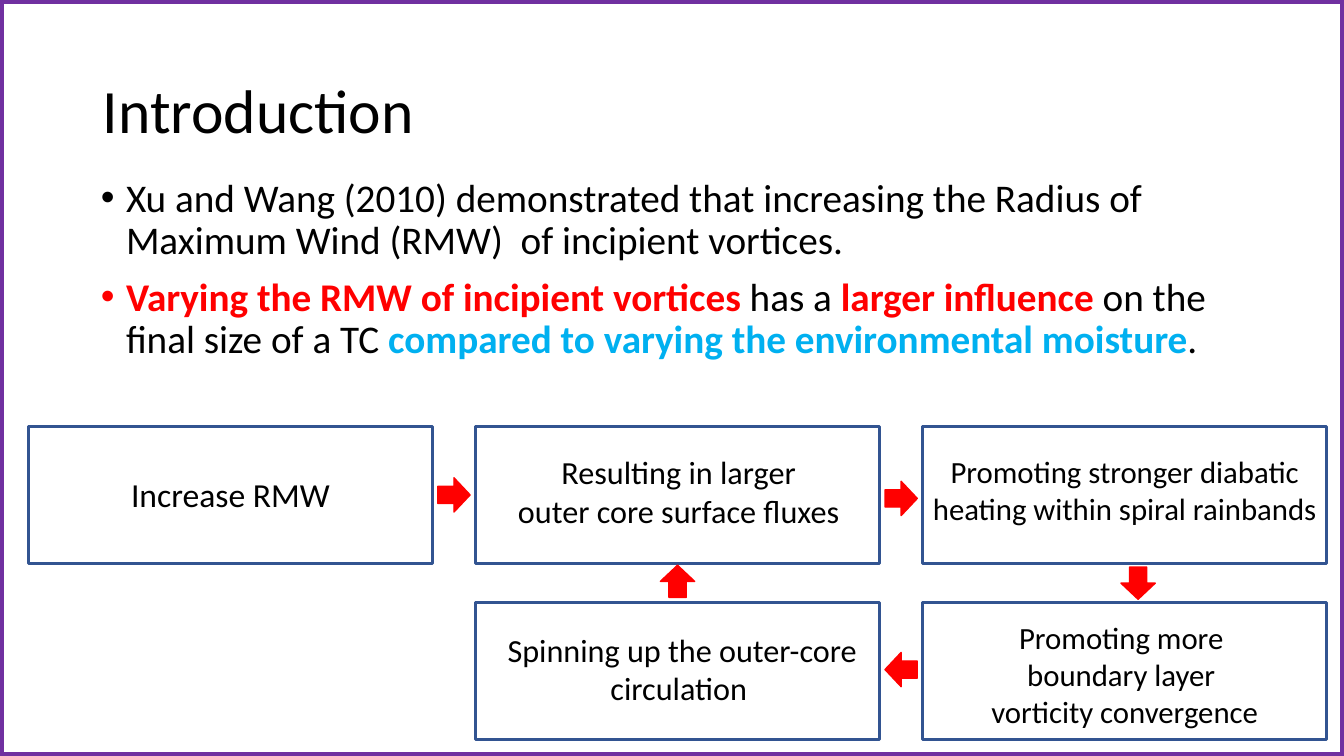
from pptx import Presentation
from pptx.dml.color import RGBColor
from pptx.enum.shapes import MSO_SHAPE
from pptx.enum.text import MSO_ANCHOR, MSO_AUTO_SIZE, PP_ALIGN
from pptx.util import Inches, Pt

RECT, ARROW = MSO_SHAPE.RECTANGLE, MSO_SHAPE.RIGHT_ARROW
LEFT, CENTER = PP_ALIGN.LEFT, PP_ALIGN.CENTER
TOP, MIDDLE = MSO_ANCHOR.TOP, MSO_ANCHOR.MIDDLE
FIXED, GROW = MSO_AUTO_SIZE.NONE, MSO_AUTO_SIZE.SHAPE_TO_FIT_TEXT

WIDE, HIGH = 13.33, 7.5
COLORS = {"ink": "000000", "frame": "7030A0", "box": "325491",
          "red": "FF0000", "sky": "00B0F0"}

# Flow grid: centre of the first box, steps between centres, box size
ORIGIN = (2.285, 4.91)
STEP = (4.435, 1.75)
BOX = (4.01, 1.36)
HEAD = (0.32, 0.34)

# column, row, text size, label width and height, nudge of the label, lines
STEPS = [
    (0, 0, 24, (2.19, 0.5), (0, -0.01), ["Increase RMW"]),
    (1, 0, 23, (3.5, 0.88), (0.05, -0.03),
     ["Resulting in larger ", "outer core surface fluxes "]),
    (2, 0, 22, (4.04, 0.84), (0, -0.05),
     ["Promoting stronger diabatic", "heating within spiral rainbands"]),
    (2, 1, 22, (2.88, 1.21), (0, 0.03),
     ["Promoting more ", "boundary layer ", "vorticity convergence"]),
    (1, 1, 23, (3.72, 0.88), (0.05, -0.02),
     ["Spinning up the outer-core", "circulation "]),
]

# column, row, turn in degrees
ARROWS = [(0.5, 0, 0), (1.5, 0.02, 0), (2.03, 0.5, 90),
          (1.5, 0.99, 180), (1, 0.49, 270)]

POINTS = [
    [("Xu and Wang (2010) demonstrated that increasing the Radius of "
      "Maximum Wind (RMW)  of incipient vortices.", "ink", False)],
    [("Varying the RMW of incipient vortices ", "red", True),
     ("has a ", "ink", False),
     ("larger influence ", "red", True),
     ("on the final size of a TC ", "ink", False),
     ("compared to varying the environmental moisture", "sky", True),
     (".", "ink", False)],
]


def paint(name):
    return RGBColor.from_string(COLORS[name])


def write(frame, lines, size, align=LEFT, anchor=TOP, wrap=True, fit=FIXED,
          space=None, before=None):
    """Fill a text frame; each line is a list of (text, colour, bold)."""
    frame.word_wrap, frame.auto_size = wrap, fit
    frame.vertical_anchor = anchor
    for i, line in enumerate(lines):
        para = frame.paragraphs[0] if i == 0 else frame.add_paragraph()
        para.alignment = align
        para.line_spacing = space
        para.space_before = before
        for text, color, bold in line:
            run = para.add_run()
            run.text = text
            font = run.font
            font.name, font.size, font.bold = "Calibri", Pt(size), bold
            font.color.rgb = paint(color)
    return frame


class Page:
    """A slide with its flow grid and its style."""

    def __init__(self, deck):
        self.slide = deck.slides.add_slide(deck.slide_layouts[1])
        self.shapes = self.slide.shapes

    def place(self, col, row, size, nudge=(0, 0)):
        """Left, top, width and height of an item centred on the grid."""
        mid = [o + n * s + d for o, n, s, d
               in zip(ORIGIN, (col, row), STEP, nudge)]
        return [Inches(m - s / 2) for m, s in zip(mid, size)] + [
            Inches(s) for s in size]

    def shape(self, kind, spot, line, width, fill=None):
        item = self.shapes.add_shape(kind, *spot)
        item.shadow.inherit = False
        item.line.color.rgb = paint(line)
        item.line.width = Pt(width)
        if fill:
            item.fill.solid()
            item.fill.fore_color.rgb = paint(fill)
        else:
            item.fill.background()
        return item

    def holder(self, index, spot, lines, size, **style):
        """Move and fill a placeholder; spot is in inches."""
        item = self.slide.placeholders[index]
        item.left, item.top, item.width, item.height = map(Inches, spot)
        write(item.text_frame, lines, size, space=0.9, **style)
        return item

    def bullets(self, spot, lines, size):
        item = self.holder(1, spot, lines, size, before=Pt(10))
        for para in item.text_frame.paragraphs:
            props = para._p.get_or_add_pPr()
            props.set("marL", str(Inches(0.25)))
            props.set("indent", str(-Inches(0.25)))

    def step(self, col, row, size, area, nudge, lines):
        self.shape(RECT, self.place(col, row, BOX), "box", 2.25)
        label = self.shapes.add_textbox(*self.place(col, row, area, nudge))
        write(label.text_frame, [[(t, "ink", False)] for t in lines], size,
              align=CENTER, wrap=False, fit=GROW)

    def arrow(self, col, row, turn):
        item = self.shape(ARROW, self.place(col, row, HEAD), "red", 1, "red")
        item.rotation = turn


def main():
    deck = Presentation()
    deck.slide_width, deck.slide_height = Inches(WIDE), Inches(HIGH)
    page = Page(deck)
    page.holder(0, (0.92, 0.4, 11.5, 1.45),
                [[("Introduction", "ink", False)]], 44, anchor=MIDDLE)
    page.bullets((0.9, 1.72, 11.5, 5.5), POINTS, 28)
    page.shape(RECT, (0, 0, Inches(WIDE), Inches(HIGH)), "frame", 6)
    for item in STEPS:
        page.step(*item)
    for item in ARROWS:
        page.arrow(*item)
    deck.save("out.pptx")


if __name__ == "__main__":
    main()
